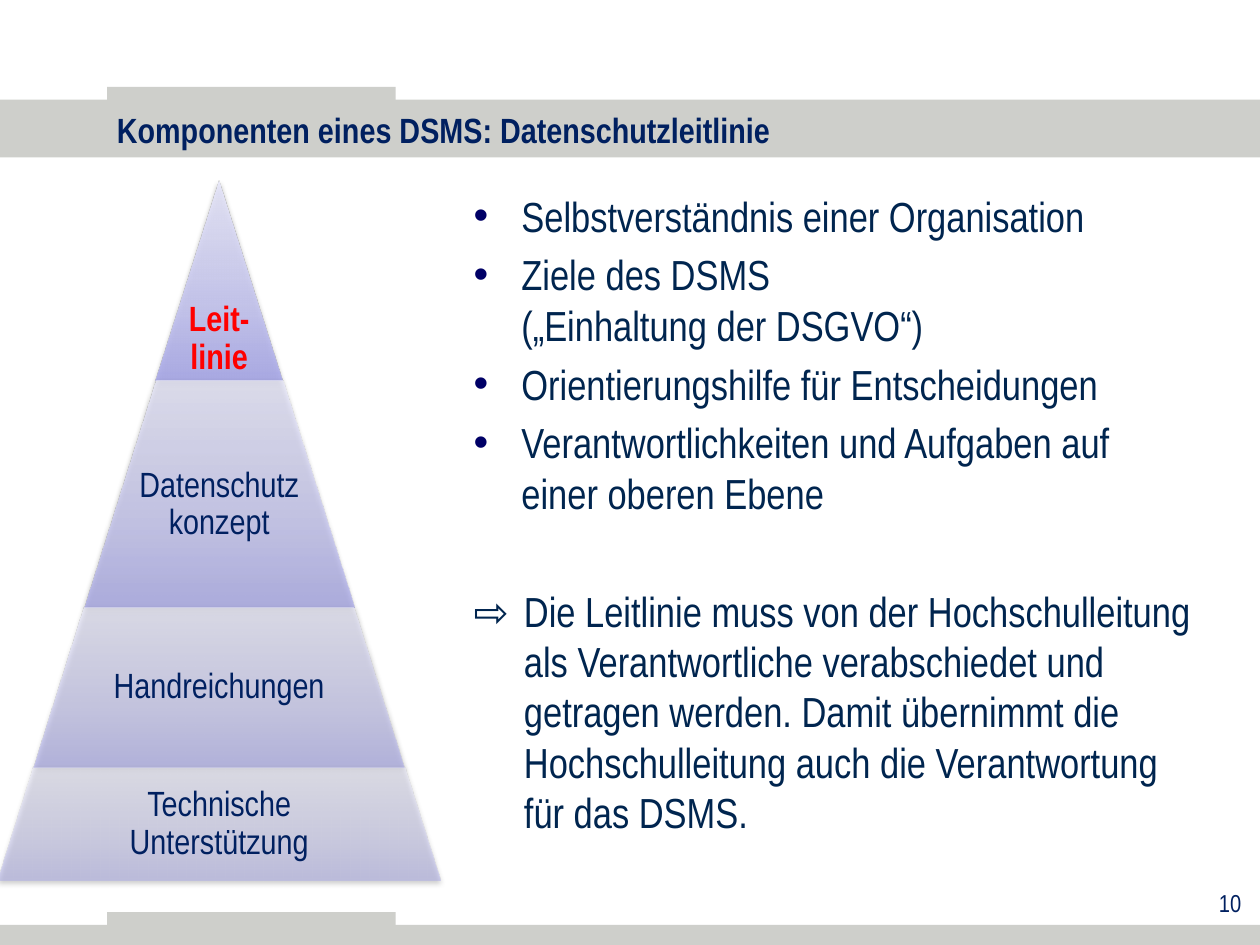
from lxml import etree
from pptx import Presentation
from pptx.dml.color import RGBColor
from pptx.enum.shapes import MSO_SHAPE
from pptx.enum.text import MSO_ANCHOR, PP_ALIGN
from pptx.oxml import parse_xml
from pptx.oxml.ns import qn
from pptx.util import Inches, Pt

RECTANGLE, TRAPEZOID = MSO_SHAPE.RECTANGLE, MSO_SHAPE.TRAPEZOID
TOP, MIDDLE, BOTTOM = MSO_ANCHOR.TOP, MSO_ANCHOR.MIDDLE, MSO_ANCHOR.BOTTOM
LEFT, CENTER, RIGHT = PP_ALIGN.LEFT, PP_ALIGN.CENTER, PP_ALIGN.RIGHT
GREY = RGBColor(0xCE, 0xCF, 0xCB)
NAVY = RGBColor(0x00, 0x20, 0x60)
INK = RGBColor(0x00, 0x25, 0x4F)
BULLET = RGBColor(0x00, 0x00, 0x66)
RED = RGBColor(0xFF, 0x00, 0x00)
GRADIENT = ((0, RGBColor(0xA9, 0xA9, 0xE9)), (35, RGBColor(0xC4, 0xC4, 0xEF)),
            (100, RGBColor(0xE8, 0xE8, 0xFA)))
NAMESPACE = 'xmlns:a="http://schemas.openxmlformats.org/drawingml/2006/main"'
SHADOW = (f'<a:effectLst {NAMESPACE}><a:outerShdw blurRad="40000" dist="20000" dir="5400000" '
          'rotWithShape="0"><a:srgbClr val="000000"><a:alpha val="38000"/></a:srgbClr>'
          '</a:outerShdw></a:effectLst>')

BARS = ((0, 0.79, 10, 0.46), (0, 7.34, 10, 0.17),
        (0.85, 0.69, 2.29, 0.13), (0.85, 7.24, 2.29, 0.13))
BULLETS = ("Selbstverständnis einer Organisation",
           "Ziele des DSMS\v(„Einhaltung der DSGVO“)",
           "Orientierungshilfe für Entscheidungen",
           "Verantwortlichkeiten und Aufgaben auf einer oberen Ebene")
CONCLUSION = ("⇨\tDie Leitlinie muss von der Hochschulleitung als Verantwortliche "
              "verabschiedet und getragen werden. Damit übernimmt die Hochschulleitung "
              "auch die Verantwortung für das DSMS.")
APEX_X, APEX_Y, SLOPE = 1.74, 1.43, 0.316
TIERS = (
    (1.43, 3.02, 90, "Leit-\vlinie", 1, dict(color=RED, bold=True, anchor=BOTTOM)),
    (3.02, 4.82, 77, "Datenschutzkonzept", 0.65, dict(insets=(0.01, 0.18, 0.01, 0.01))),
    (4.82, 6.09, 63, "Handreichungen", 0.65, {}),
    (6.09, 6.99, 50, "Technische Unterstützung", 0.65, {}),
)


class SlideBuilder:
    """Holds the style and the current slide, and adds each kind of element."""

    font_name = "Arial Narrow"

    def __init__(self, slide):
        self.slide = slide

    def shape(self, kind, left, top, width, height):
        shape = self.slide.shapes.add_shape(
            kind, Inches(left), Inches(top), Inches(width), Inches(height))
        shape.shadow.inherit = False
        shape.line.fill.background()
        return shape

    def bar(self, left, top, width, height):
        bar = self.shape(RECTANGLE, left, top, width, height)
        bar.fill.solid()
        bar.fill.fore_color.rgb = GREY

    def tier(self, top, bottom, opacity):
        width, height = 2 * SLOPE * (bottom - APEX_Y), bottom - top
        tier = self.shape(TRAPEZOID, APEX_X - width / 2, top, width, height)
        tier.adjustments[0] = min(SLOPE * height / min(width, height), 0.5 * width / min(width, height))
        tier.fill.background()
        stops = "".join(
            f'<a:gs pos="{position * 1000}"><a:srgbClr val="{color}">'
            f'<a:alpha val="{opacity * 1000}"/></a:srgbClr></a:gs>'
            for position, color in GRADIENT)
        properties = tier._element.spPr
        properties.replace(properties.find(qn("a:noFill")), parse_xml(
            f'<a:gradFill {NAMESPACE} rotWithShape="1"><a:gsLst>{stops}</a:gsLst>'
            '<a:lin ang="16200000" scaled="0"/></a:gradFill>'))
        properties.replace(properties.find(qn("a:effectLst")), parse_xml(SHADOW))
        return width

    def text_frame(self, left, top, width, height, anchor=TOP, insets=(0.1, 0.05, 0.1, 0.05)):
        box = self.slide.shapes.add_textbox(
            Inches(left), Inches(top), Inches(width), Inches(height))
        frame = box.text_frame
        frame.word_wrap = True
        frame.vertical_anchor = anchor
        (frame.margin_left, frame.margin_top,
         frame.margin_right, frame.margin_bottom) = map(Inches, insets)
        return frame

    def format(self, paragraph, size, color, bold=False, align=LEFT):
        paragraph.alignment = align
        font = paragraph.font
        font.name, font.size, font.bold = self.font_name, Pt(size), bold
        font.color.rgb = color

    def label(self, text, left, top, width, height, size=20, color=NAVY, bold=False,
              align=CENTER, anchor=MIDDLE, insets=(0.03, 0.03, 0.03, 0.03), spacing=0.9):
        frame = self.text_frame(left, top, width, height, anchor, insets)
        paragraph = frame.paragraphs[0]
        paragraph.text = text
        paragraph.line_spacing = spacing
        self.format(paragraph, size, color, bold, align)

    def body(self, left, top, width, height):
        frame = self.text_frame(left, top, width, height)
        for index, text in enumerate((*BULLETS, CONCLUSION)):
            paragraph = frame.add_paragraph() if index else frame.paragraphs[0]
            paragraph.text = text
            is_bullet = text != CONCLUSION
            indent = Inches(0.38 if is_bullet else 0.4)
            properties = paragraph._p.get_or_add_pPr()
            properties.set("marL", str(indent))
            properties.set("indent", str(-indent))
            if is_bullet:
                bullet_color = etree.SubElement(properties, qn("a:buClr"))
                etree.SubElement(bullet_color, qn("a:srgbClr"), val=str(BULLET))
                etree.SubElement(properties, qn("a:buFont"), typeface="Arial")
                etree.SubElement(properties, qn("a:buChar"), char="•")
            if index:
                paragraph.space_before = Pt(4.8 if is_bullet else 38.5)
            self.format(paragraph, 24, INK)


def main():
    presentation = Presentation()
    presentation.slide_width, presentation.slide_height = Inches(10), Inches(7.5)
    builder = SlideBuilder(presentation.slides.add_slide(presentation.slide_layouts[6]))
    for bar in BARS:
        builder.bar(*bar)
    builder.label("Komponenten eines DSMS: Datenschutzleitlinie", 0.83, 0.82, 8.7, 0.42,
                  bold=True, align=LEFT, insets=(0.1, 0.05, 0.1, 0.05), spacing=1)
    builder.body(3.66, 1.46, 5.92, 5.69)
    builder.label("10", 7.73, 7, 2.22, 0.43, size=14, align=RIGHT, anchor=TOP,
                  insets=(0.1, 0.05, 0.1, 0.05), spacing=1)
    for top, bottom, opacity, text, share, style in TIERS:
        width = share * builder.tier(top, bottom, opacity)
        builder.label(text, APEX_X - width / 2, top, width, bottom - top, **style)
    presentation.save("out.pptx")


if __name__ == "__main__":
    main()
